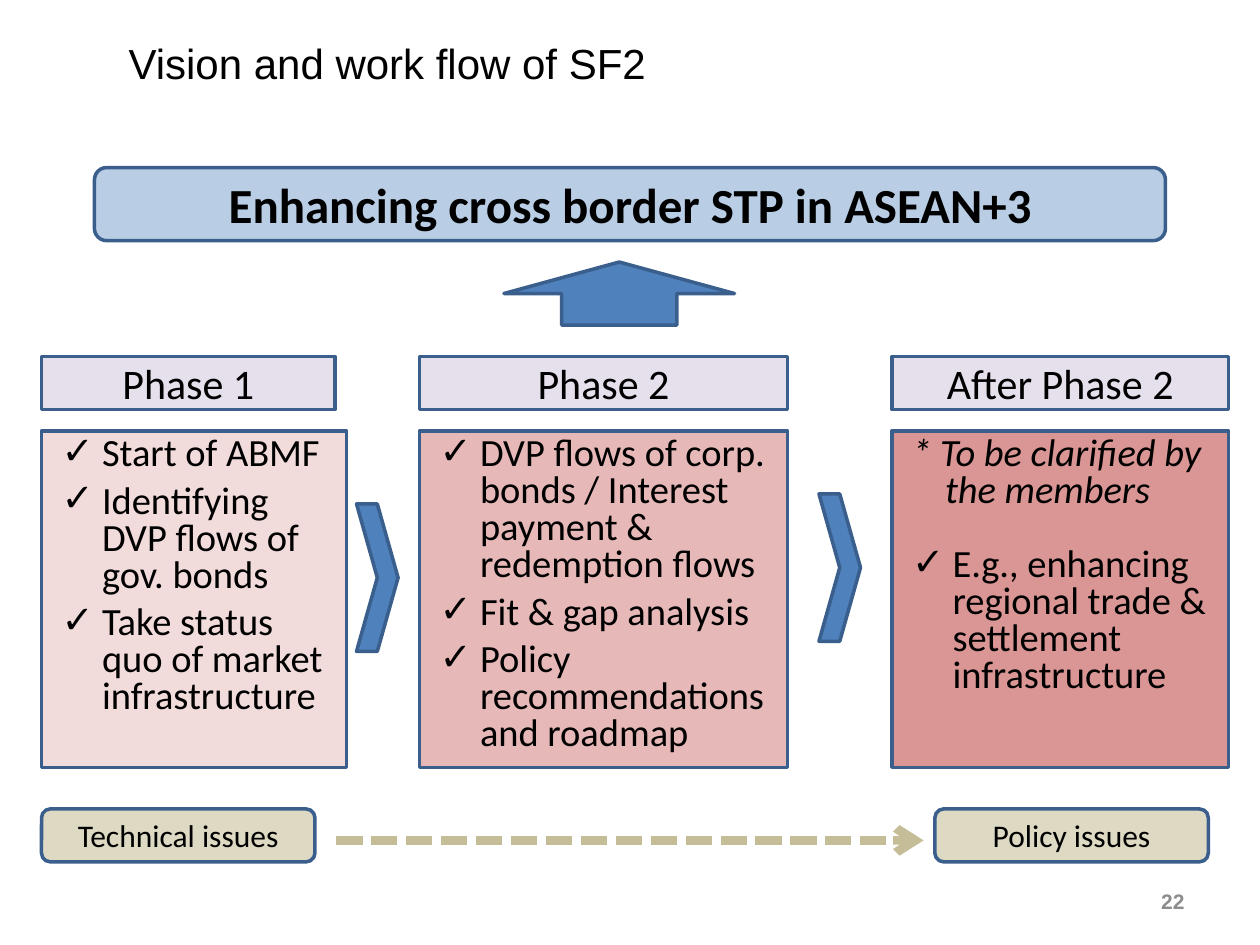
"""Build the slide on the vision and work flow of SF2."""
from lxml import etree
from pptx import Presentation, util as u
from pptx.dml.color import RGBColor
from pptx.enum import shapes, text
from pptx.oxml.ns import qn

COLORS = {
    "edge": "3A5F8C", "arrow": "4F81BD", "vision": "B9CDE5", "head": "E6E0EC",
    "issue": "DDD9C3", "dash": "C4BD97", "text": "000000", "number": "8C8C8C",
    "phase1": "F2DCDB", "phase2": "E6B9B8", "after": "D99694",
}
TITLE = "Vision and work flow of SF2"
VISION = "Enhancing cross border STP in ASEAN+3"
NOTE = "* To be clarified by the members"
PHASES = [
    {"head": "Phase 1", "x": 0.33, "widths": (2.33, 2.42), "fill": "phase1", "gap": 6,
     "items": ["Start of ABMF", "Identifying DVP flows of gov. bonds",
               "Take status quo of market infrastructure"]},
    {"head": "Phase 2", "x": 3.33, "widths": (2.92, 2.92), "fill": "phase2", "gap": 6,
     "items": ["DVP flows of corp. bonds / Interest payment & redemption flows",
               "Fit & gap analysis", "Policy recommendations and roadmap"]},
    {"head": "After Phase 2", "x": 7.08, "widths": (2.67, 2.67), "fill": "after", "gap": 21,
     "items": [NOTE, "E.g., enhancing regional trade & settlement infrastructure"]},
]
ISSUES = [("Technical issues", 0.33), ("Policy issues", 7.42)]
CHEVRONS = [(2.83, 4), (6.5, 3.92)]
HEAD_Y, BODY_Y, ISSUE_Y = 2.83, 3.42, 6.42
KIND = shapes.MSO_SHAPE
ALIGN = text.PP_ALIGN


def rgb(name):
    return RGBColor.from_string(COLORS[name])


def place(sp, x, y, w, h):
    box = {"left": x, "top": y, "width": w, "height": h}
    for key, value in box.items():
        setattr(sp, key, u.Inches(value))


def paint(sp, fill):
    sp.fill.solid()
    sp.fill.fore_color.rgb = rgb(fill)
    sp.line.color.rgb = rgb("edge")
    sp.line.width = u.Pt(2)


def set_frame(tf, anchor, wrap=True):
    formats = {"word_wrap": wrap, "auto_size": text.MSO_AUTO_SIZE.NONE,
               "vertical_anchor": anchor}
    for key, value in formats.items():
        setattr(tf, key, value)


def write(p, words, size, align, font="Calibri", color="text", **styles):
    p.alignment = align
    r = p.add_run()
    r.text = words
    formats = {"name": font, "size": u.Pt(size), "bold": False, "italic": False, **styles}
    for key, value in formats.items():
        setattr(r.font, key, value)
    r.font.color.rgb = rgb(color)


def add_box(s, kind, box, fill, words="", size=24, **styles):
    sp = s.shapes.add_shape(kind, *map(u.Inches, box))
    sp.shadow.inherit = False
    paint(sp, fill)
    if words:
        set_frame(sp.text_frame, text.MSO_ANCHOR.MIDDLE)
        write(sp.text_frame.paragraphs[0], words, size, ALIGN.CENTER, **styles)


def set_bullet(p, shown):
    indent = 0.38 if shown else 0.32
    pPr = p._p.get_or_add_pPr()
    pPr.set("marL", str(u.Inches(indent)))
    pPr.set("indent", str(u.Inches(0.06 - indent)))
    if shown:
        etree.SubElement(pPr, qn("a:buChar")).set("char", "✓")
    else:
        etree.SubElement(pPr, qn("a:buNone"))


def fill_list(sp, phase):
    place(sp, phase["x"], BODY_Y, phase["widths"][1], 2.67)
    paint(sp, phase["fill"])
    tf = sp.text_frame
    set_frame(tf, text.MSO_ANCHOR.TOP)
    for i, item in enumerate(phase["items"]):
        p = tf.add_paragraph() if i else tf.paragraphs[0]
        formats = {"line_spacing": 0.8, "space_after": u.Pt(0),
                   "space_before": u.Pt(phase["gap"] if i else 0)}
        for key, value in formats.items():
            setattr(p, key, value)
        write(p, item, 22, ALIGN.LEFT, italic=item == NOTE)
        set_bullet(p, item != NOTE)


def add_dashed_arrow(s, x1, x2, y):
    line = s.shapes.add_connector(shapes.MSO_CONNECTOR.STRAIGHT,
                                  *map(u.Inches, (x1, y, x2, y)))
    line.line.color.rgb = rgb("dash")
    line.line.width = u.Pt(5)
    ln = line.line._get_or_add_ln()
    etree.SubElement(ln, qn("a:prstDash")).set("val", "sysDash")
    etree.SubElement(ln, qn("a:tailEnd")).set("type", "arrow")
    etree.SubElement(line._element.spPr, qn("a:effectLst"))


def main():
    prs = Presentation()
    prs.slide_width, prs.slide_height = u.Inches(10), u.Inches(7.5)
    s = prs.slides.add_slide(prs.slide_layouts.get_by_name("Comparison"))

    title, *bodies = s.placeholders
    place(title, 0.92, 0.25, 4.32, 0.5)
    set_frame(title.text_frame, text.MSO_ANCHOR.TOP, wrap=False)
    write(title.text_frame.paragraphs[0], TITLE, 24, ALIGN.LEFT, font="Arial")

    for sp, phase in zip(bodies, PHASES):
        fill_list(sp, phase)
        add_box(s, KIND.FLOWCHART_PROCESS, (phase["x"], HEAD_Y, phase["widths"][0], 0.42),
                "head", phase["head"])
    for sp in bodies[len(PHASES):]:
        sp._element.getparent().remove(sp._element)

    add_box(s, KIND.FLOWCHART_ALTERNATE_PROCESS, (0.75, 1.33, 8.5, 0.58),
            "vision", VISION, 28, bold=True)
    add_box(s, KIND.UP_ARROW, (4, 2.08, 1.83, 0.5), "arrow")
    for x, y in CHEVRONS:
        add_box(s, KIND.CHEVRON, (x, y, 0.33, 1.17), "arrow")
    for words, x in ISSUES:
        add_box(s, KIND.FLOWCHART_ALTERNATE_PROCESS, (x, ISSUE_Y, 2.17, 0.42),
                "issue", words, 18)
    add_dashed_arrow(s, 2.67, 7.33, 6.67)

    number = s.shapes.add_textbox(*map(u.Inches, (7.17, 6.95, 2.33, 0.4)))
    set_frame(number.text_frame, text.MSO_ANCHOR.MIDDLE)
    write(number.text_frame.paragraphs[0], "22", 12, ALIGN.RIGHT, font="Arial",
          color="number", bold=True)
    prs.save("out.pptx")


if __name__ == "__main__":
    main()
